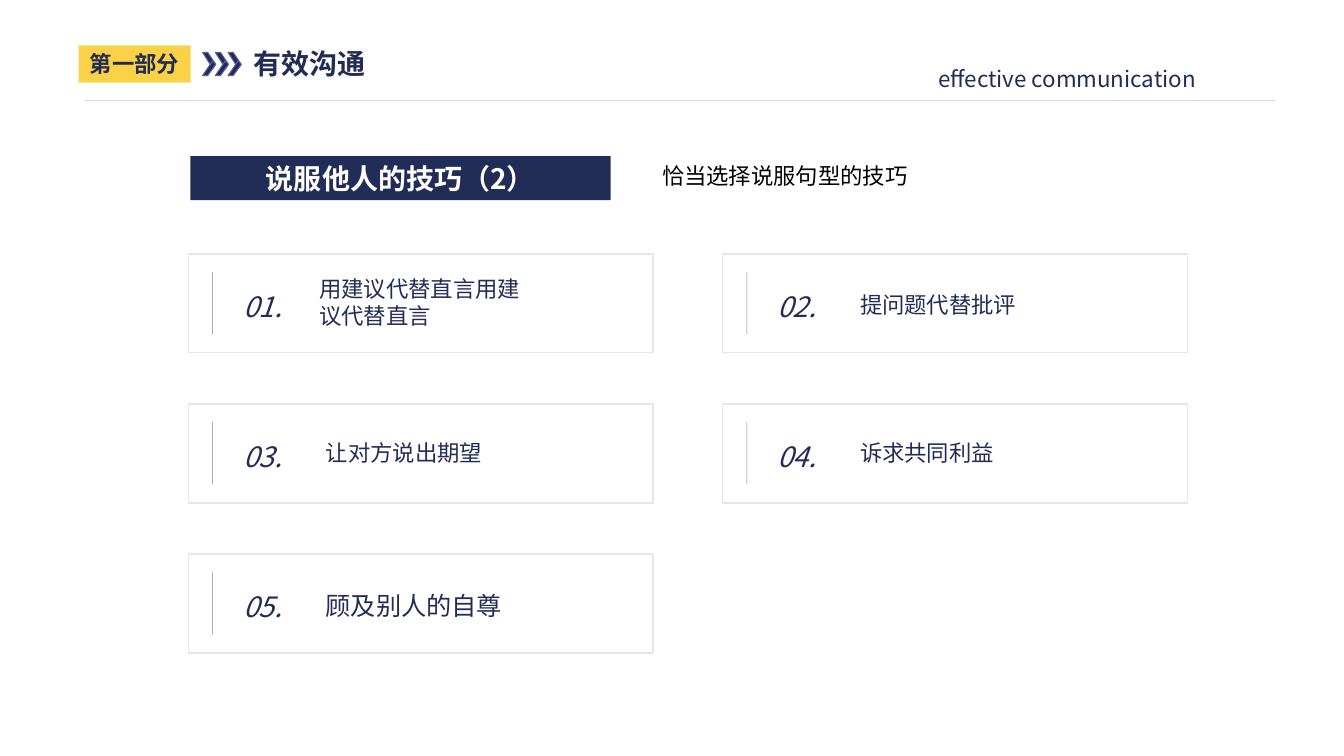
from dataclasses import dataclass
from typing import Optional

import lxml.etree
import pptx
import pptx.dml.color
import pptx.enum.dml
import pptx.enum.shapes
import pptx.enum.text
import pptx.oxml.ns
import pptx.util

Pt = pptx.util.Pt
qn = pptx.oxml.ns.qn
Align = pptx.enum.text.PP_ALIGN


@dataclass(frozen=True)
class Theme:
    font: str = "Noto Sans CJK SC"
    navy: str = "222D57"
    heading: str = "212C56"
    yellow: str = "FBD247"
    white: str = "FFFFFF"
    black: str = "000000"
    border: str = "E7E6E6"
    divider: str = "D9D9D9"
    chevron_edge: str = "5C629E"
    body: float = 16
    large: float = 18
    title: float = 20


@dataclass(frozen=True)
class Box:
    left: float
    top: float
    width: float
    height: float


@dataclass(frozen=True)
class Label:
    text: str
    box: Box
    size: float
    color: str
    fill: Optional[str] = None
    align: Optional[Align] = None
    bold: bool = False
    italic: bool = False
    spacing: Optional[float] = None
    wrap: bool = True
    indent: float = 0


@dataclass(frozen=True)
class Skill:
    text: str
    left: float = 91
    top: float = 16
    height: float = 30
    size: float = 16
    spacing: Optional[float] = 1.3


THEME = Theme()
GRID_LEFT, GRID_TOP = 134.6, 181.4
COLUMN_STEP, ROW_STEP = 381.6, 107.2
CARD_WIDTH, CARD_HEIGHT = 332, 70.6
SKILLS = [
    Skill("用建议代替直言用建议代替直言", left=86.4, top=11.5, height=46, spacing=None),
    Skill("提问题代替批评", top=17.2),
    Skill("让对方说出期望"),
    Skill("诉求共同利益"),
    Skill("顾及别人的自尊", height=33, size=THEME.large),
]
LABELS = [
    Label("说服他人的技巧（2）", Box(136, 111.5, 300.2, 31.5), THEME.title, THEME.white,
          fill=THEME.navy, align=Align.CENTER, bold=True),
    Label("恰当选择说服句型的技巧", Box(465.8, 112.3, 272.2, 26.6), THEME.body, THEME.black),
    Label("有效沟通", Box(174.2, 29.5, 128.2, 31.5), THEME.title, THEME.heading,
          align=Align.JUSTIFY, bold=True),
    Label("第一部分", Box(56.2, 32.5, 80, 26.6), THEME.body, THEME.heading,
          fill=THEME.yellow, align=Align.CENTER, bold=True),
    Label("effective communication", Box(627.1, 43.2, 270.7, 26.6), THEME.body, THEME.navy,
          align=Align.JUSTIFY, indent=36),
]


def rgb(color: str) -> pptx.dml.color.RGBColor:
    return pptx.dml.color.RGBColor.from_string(color)


def paint(shape, fill: str, line: Optional[str] = None, width: float = 1) -> None:
    shape.shadow.inherit = False
    shape.fill.solid()
    shape.fill.fore_color.rgb = rgb(fill)
    if line is None:
        shape.line.fill.background()
    else:
        shape.line.color.rgb = rgb(line)
        shape.line.width = Pt(width)


def add_rectangle(page, box: Box, fill: str, line: Optional[str] = None):
    shape = page.shapes.add_shape(
        pptx.enum.shapes.MSO_SHAPE.RECTANGLE,
        Pt(box.left), Pt(box.top), Pt(box.width), Pt(box.height))
    paint(shape, fill, line)
    return shape


def add_label(page, label: Label) -> None:
    box = label.box
    if label.fill:
        shape = add_rectangle(page, box, label.fill)
    else:
        shape = page.shapes.add_textbox(
            Pt(box.left), Pt(box.top), Pt(box.width), Pt(box.height))
    frame = shape.text_frame
    frame.word_wrap = label.wrap
    frame.vertical_anchor = pptx.enum.text.MSO_ANCHOR.TOP
    frame.auto_size = pptx.enum.text.MSO_AUTO_SIZE.SHAPE_TO_FIT_TEXT
    para = frame.paragraphs[0]
    para.text = label.text
    para.alignment = label.align or Align.LEFT
    if label.spacing:
        para.line_spacing = label.spacing
    font = para.font
    font.name, font.size = THEME.font, Pt(label.size)
    font.bold, font.italic = label.bold, label.italic
    font.color.rgb = rgb(label.color)
    properties = para._p.get_or_add_pPr()
    east_asian = lxml.etree.SubElement(properties.find(qn("a:defRPr")), qn("a:ea"))
    east_asian.set("typeface", THEME.font)
    if label.indent:
        para.level = 1
        properties.set("marL", str(Pt(label.indent)))
        properties.set("indent", "0")


def add_rule(page, start: tuple[float, float], end: tuple[float, float],
             color: str, opacity: int = 100) -> None:
    rule = page.shapes.add_connector(
        pptx.enum.shapes.MSO_CONNECTOR.STRAIGHT,
        Pt(start[0]), Pt(start[1]), Pt(end[0]), Pt(end[1]))
    rule.line.color.rgb = rgb(color)
    rule.line.width = Pt(0.5)
    properties = rule._element.spPr
    if opacity < 100:
        alpha = lxml.etree.SubElement(next(properties.iter(qn("a:srgbClr"))), qn("a:alpha"))
        alpha.set("val", str(opacity * 1000))
    lxml.etree.SubElement(properties, qn("a:effectLst"))


def add_card(page, index: int, skill: Skill) -> None:
    row, column = divmod(index, 2)
    left = GRID_LEFT + column * COLUMN_STEP
    top = GRID_TOP + row * ROW_STEP
    add_rectangle(page, Box(left, top, CARD_WIDTH, CARD_HEIGHT), THEME.white, THEME.border)
    add_label(page, Label(
        f"{index + 1:02}.", Box(left + 31, top + 17, 44, 34), THEME.title, THEME.navy,
        align=Align.CENTER, italic=True, spacing=1.2, wrap=False))
    add_rule(page, (left + 17.3, top + 57.3), (left + 17.3, top + 13), THEME.black, 50)
    add_label(page, Label(
        skill.text, Box(left + skill.left, top + skill.top, 166.3, skill.height),
        skill.size, THEME.navy, spacing=skill.spacing))


def add_chevron(page, left: float) -> None:
    for edge, middle, tip in ((37.4, 49, 46), (54, 43.2, 46)):
        builder = page.shapes.build_freeform(Pt(left), Pt(edge))
        builder.add_line_segments([
            (Pt(left + 7.4), Pt(middle)), (Pt(left + 9.4), Pt(tip)), (Pt(left + 3.7), Pt(edge))])
        paint(builder.convert_to_shape(), THEME.heading, THEME.chevron_edge, 0.75)


def main() -> None:
    deck = pptx.Presentation()
    deck.slide_width, deck.slide_height = Pt(960), Pt(540)
    page = deck.slides.add_slide(deck.slide_layouts[6])
    for index, skill in enumerate(SKILLS):
        add_card(page, index, skill)
    for label in LABELS:
        add_label(page, label)
    for step in range(3):
        add_chevron(page, 144.7 + step * 9.1)
    add_rule(page, (60.5, 71.5), (910.8, 71.5), THEME.divider)
    deck.save("out.pptx")


if __name__ == "__main__":
    main()
